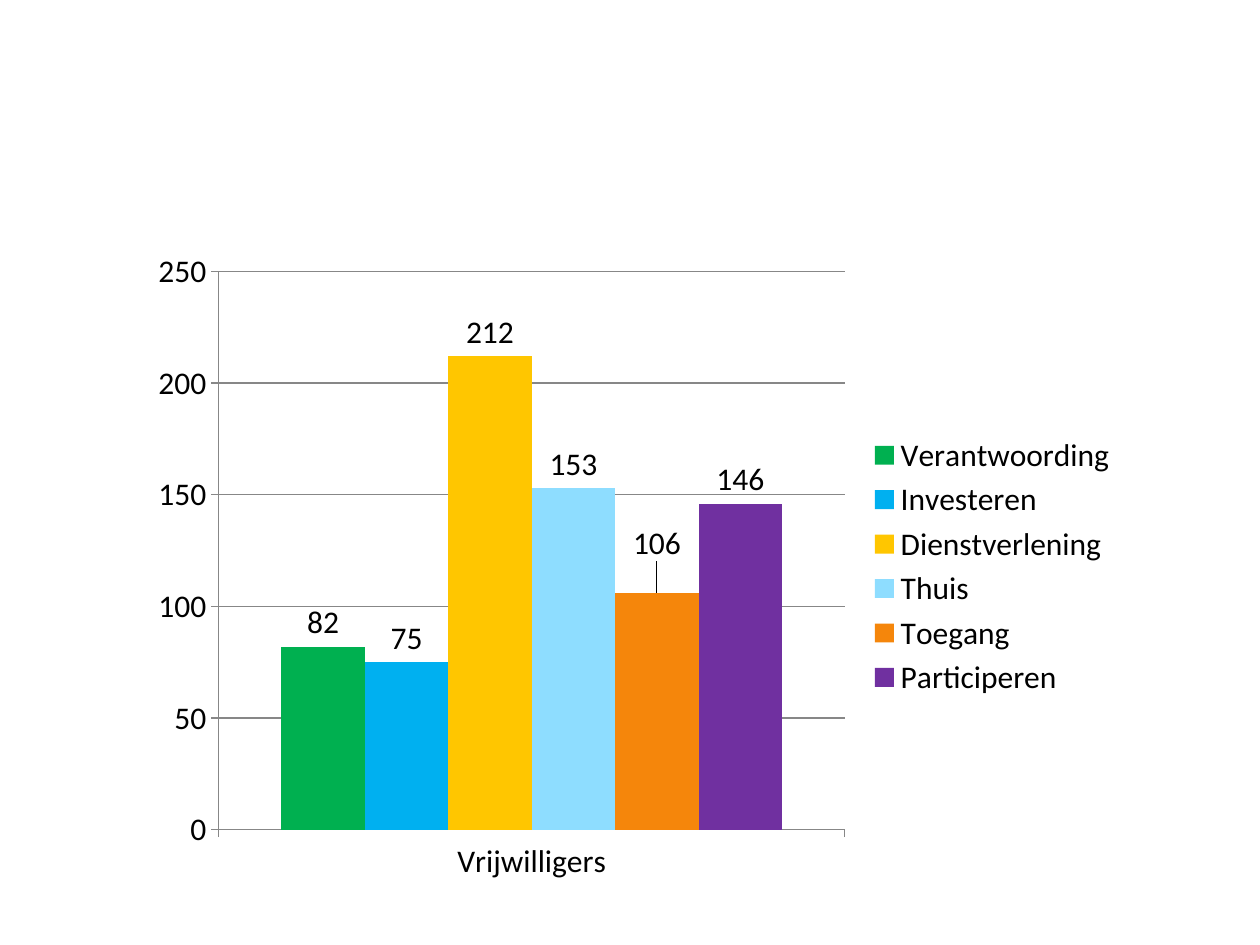
import pptx
import pptx.chart.data
import pptx.dml.color
import pptx.enum.chart
import pptx.oxml
import pptx.util
from pptx.util import Pt

COLORS = {
    "text": "000000",
    "line": "878787",
    "Verantwoording": "00B050",
    "Investeren": "00B0F0",
    "Dienstverlening": "FFC600",
    "Thuis": "8EDDFF",
    "Toegang": "F5860B",
    "Participeren": "7030A0",
}
VOLUNTEERS = {
    "Verantwoording": 82,
    "Investeren": 75,
    "Dienstverlening": 212,
    "Thuis": 153,
    "Toegang": 106,
    "Participeren": 146,
}
LABEL_SHIFTS = {"Toegang": -0.04}
CHART_NAMESPACE = "http://schemas.openxmlformats.org/drawingml/2006/chart"


def rgb(name):
    return pptx.dml.color.RGBColor.from_string(COLORS[name])


def style_line(line):
    line.color.rgb = rgb("line")
    line.width = Pt(0.75)


def shift_label(series, offset):
    label = series.points[0].data_label
    label.position = pptx.enum.chart.XL_LABEL_POSITION.OUTSIDE_END
    layout = pptx.oxml.parse_xml(
        f'<c:layout xmlns:c="{CHART_NAMESPACE}"><c:manualLayout>'
        f'<c:x val="0"/><c:y val="{offset}"/>'
        "</c:manualLayout></c:layout>"
    )
    index = series._element.find(f".//{{{CHART_NAMESPACE}}}dLbl/{{{CHART_NAMESPACE}}}idx")
    index.addnext(layout)


def style_series(series):
    series.format.fill.solid()
    series.format.fill.fore_color.rgb = rgb(series.name)
    series.invert_if_negative = False
    series.data_labels.show_value = True
    series.data_labels.position = pptx.enum.chart.XL_LABEL_POSITION.OUTSIDE_END
    if series.name in LABEL_SHIFTS:
        shift_label(series, LABEL_SHIFTS[series.name])


def add_volunteer_chart(page, left, top, width, height):
    data = pptx.chart.data.CategoryChartData()
    data.categories = ["Vrijwilligers"]
    for name, count in VOLUNTEERS.items():
        data.add_series(name, [count])
    chart = page.shapes.add_chart(
        pptx.enum.chart.XL_CHART_TYPE.COLUMN_CLUSTERED, left, top, width, height, data
    ).chart
    chart.has_title = False
    chart.font.name = "Calibri"
    chart.font.size = Pt(18)
    chart.font.color.rgb = rgb("text")
    chart.has_legend = True
    chart.legend.position = pptx.enum.chart.XL_LEGEND_POSITION.RIGHT
    chart.legend.include_in_layout = False
    for axis in (chart.category_axis, chart.value_axis):
        axis.major_tick_mark = pptx.enum.chart.XL_TICK_MARK.OUTSIDE
        style_line(axis.format.line)
    chart.value_axis.has_major_gridlines = True
    style_line(chart.value_axis.major_gridlines.format.line)
    plot = chart.plots[0]
    plot.gap_width = 150
    plot.vary_by_categories = False
    for series in plot.series:
        style_series(series)


def main():
    deck = pptx.Presentation()
    deck.slide_width, deck.slide_height = Pt(720), Pt(540)
    page = deck.slides.add_slide(deck.slide_layouts[6])
    add_volunteer_chart(page, Pt(79.2), Pt(136.8), Pt(566.64), Pt(373.68))
    deck.save("out.pptx")


if __name__ == "__main__":
    main()
